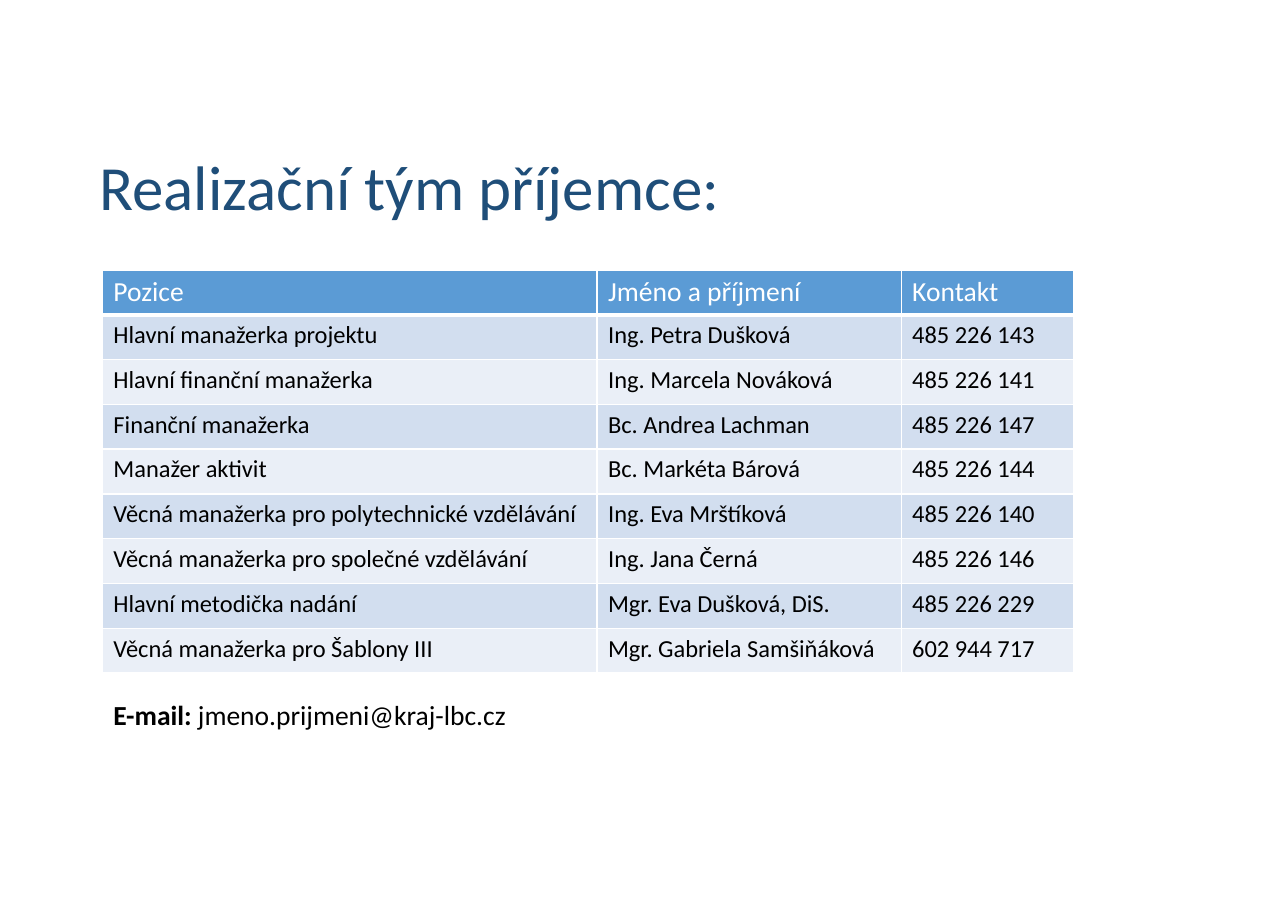
from lxml import etree
from pptx import Presentation, util as u
from pptx.dml.color import RGBColor
from pptx.enum import text
from pptx.oxml import ns

HUES = {"title": "1F4E79", "head": "5B9BD5", "odd": "D2DEEF",
        "even": "EAEFF7", "white": "FFFFFF", "ink": "000000"}
WIDTHS = (4.49, 2.76, 1.57)
ROW = 0.407
TEAM = [
    ("Pozice", "Jméno a příjmení", "Kontakt"),
    ("Hlavní manažerka projektu", "Ing. Petra Dušková", "485 226 143"),
    ("Hlavní finanční manažerka", "Ing. Marcela Nováková", "485 226 141"),
    ("Finanční manažerka", "Bc. Andrea Lachman", "485 226 147"),
    ("Manažer aktivit", "Bc. Markéta Bárová", "485 226 144"),
    ("Věcná manažerka pro polytechnické vzdělávání", "Ing. Eva Mrštíková", "485 226 140"),
    ("Věcná manažerka pro společné vzdělávání", "Ing. Jana Černá", "485 226 146"),
    ("Hlavní metodička nadání", "Mgr. Eva Dušková, DiS.", "485 226 229"),
    ("Věcná manažerka pro Šablony III", "Mgr. Gabriela Samšiňáková", "602 944 717"),
]


def color(name):
    """Return the named colour."""
    return RGBColor.from_string(HUES[name])


def write(para, words, size=18, hue="ink", bold=False, face="Calibri"):
    """Add one formatted run to a paragraph."""
    run = para.add_run()
    run.text = words
    run.font.size, run.font.bold, run.font.name = u.Pt(size), bold, face
    run.font.color.rgb = color(hue)


def edge(cell, base):
    """Draw white borders round a cell, with the given bottom width."""
    props = cell._tc.get_or_add_tcPr()
    for spot, (side, width) in enumerate(zip("LRTB", (1, 1, 1, base))):
        line = etree.Element(ns.qn(f"a:ln{side}"), w=str(u.Pt(width)))
        fill = etree.SubElement(line, ns.qn("a:solidFill"))
        etree.SubElement(fill, ns.qn("a:srgbClr"), val=HUES["white"])
        props.insert(spot, line)


class Page:
    """Holds the slide and draws each kind of element on it."""

    def __init__(self, deck):
        """Add a title-only slide."""
        self.slide = deck.slides.add_slide(deck.slide_layouts[5])
        self.slide.background.fill.solid()
        self.slide.background.fill.fore_color.rgb = color("white")

    def title(self, words, left, top, width, height):
        """Place and format the title."""
        box = self.slide.shapes.title
        box.left, box.top = u.Inches(left), u.Inches(top)
        box.width, box.height = u.Inches(width), u.Inches(height)
        frame = box.text_frame
        frame.auto_size = text.MSO_AUTO_SIZE.NONE
        frame.vertical_anchor = text.MSO_ANCHOR.MIDDLE
        para = frame.paragraphs[0]
        para.alignment, para.line_spacing = text.PP_ALIGN.LEFT, 0.7
        write(para, words, size=41.1, hue="title")

    def table(self, rows, left, top):
        """Draw the table with a header and banded rows."""
        frame = self.slide.shapes.add_table(
            len(rows), len(WIDTHS), u.Inches(left), u.Inches(top),
            u.Inches(sum(WIDTHS)), u.Inches(ROW * len(rows)))
        grid = frame.table
        for col, width in zip(grid.columns, WIDTHS):
            col.width = u.Inches(width)
        for r, row in enumerate(rows):
            band = "head" if r == 0 else "odd" if r % 2 else "even"
            for c, words in enumerate(row):
                cell = grid.cell(r, c)
                cell.fill.solid()
                cell.fill.fore_color.rgb = color(band)
                edge(cell, 1 if r else 3)
                write(cell.text_frame.paragraphs[0], words,
                      size=16 if r else 18, hue="ink" if r else "white")

    def note(self, label, words, left, top, width, height):
        """Add a line with a bold label."""
        box = self.slide.shapes.add_textbox(
            u.Inches(left), u.Inches(top), u.Inches(width), u.Inches(height))
        frame = box.text_frame
        frame.word_wrap = True
        frame.auto_size = text.MSO_AUTO_SIZE.SHAPE_TO_FIT_TEXT
        write(frame.paragraphs[0], label, bold=True)
        write(frame.paragraphs[0], words)


def main():
    """Build and save the slide."""
    deck = Presentation()
    deck.slide_width, deck.slide_height = u.Inches(11.69), u.Inches(8.27)
    page = Page(deck)
    page.title("Realizační tým příjemce:", 0.8, 1.46, 10.08, 0.61)
    page.table(TEAM, 0.93, 2.45)
    page.note("E-mail: ", "jmeno.prijmeni@kraj-lbc.cz", 0.93, 6.29, 6.69, 0.4)
    deck.save("out.pptx")


if __name__ == "__main__":
    main()
